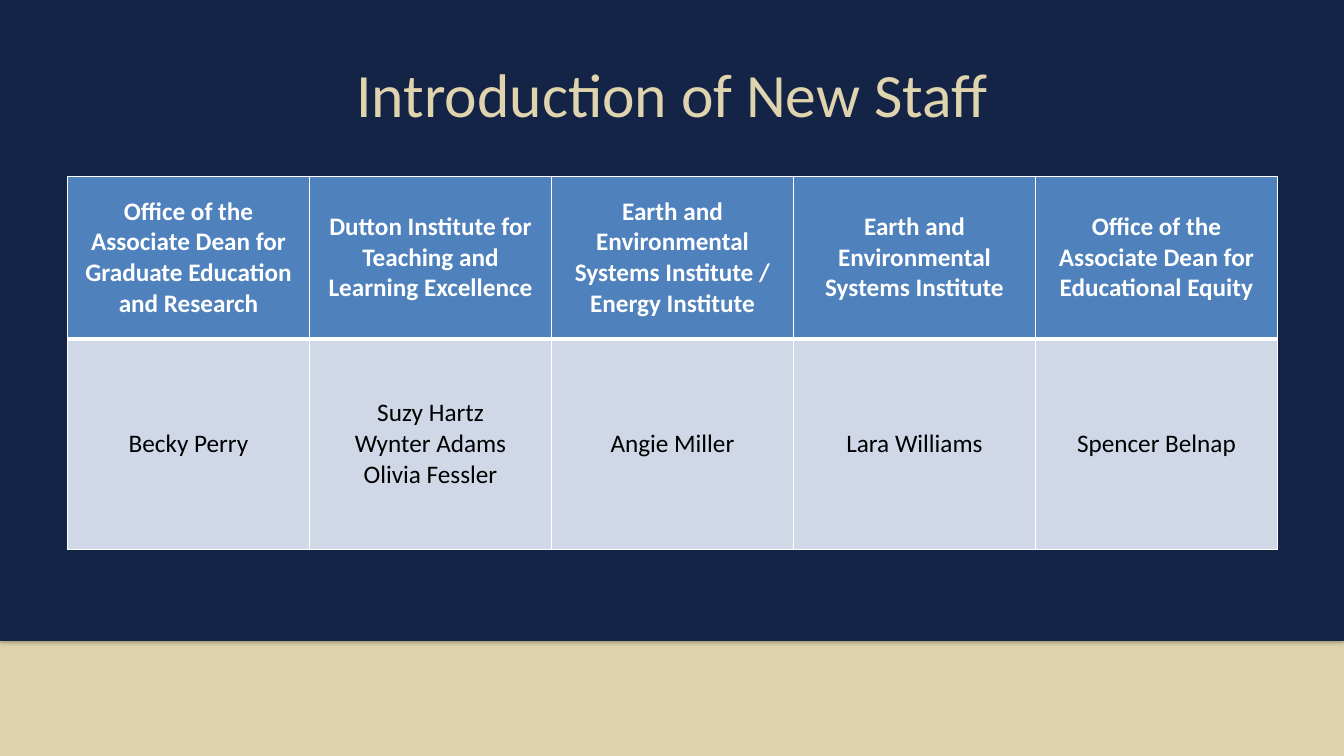
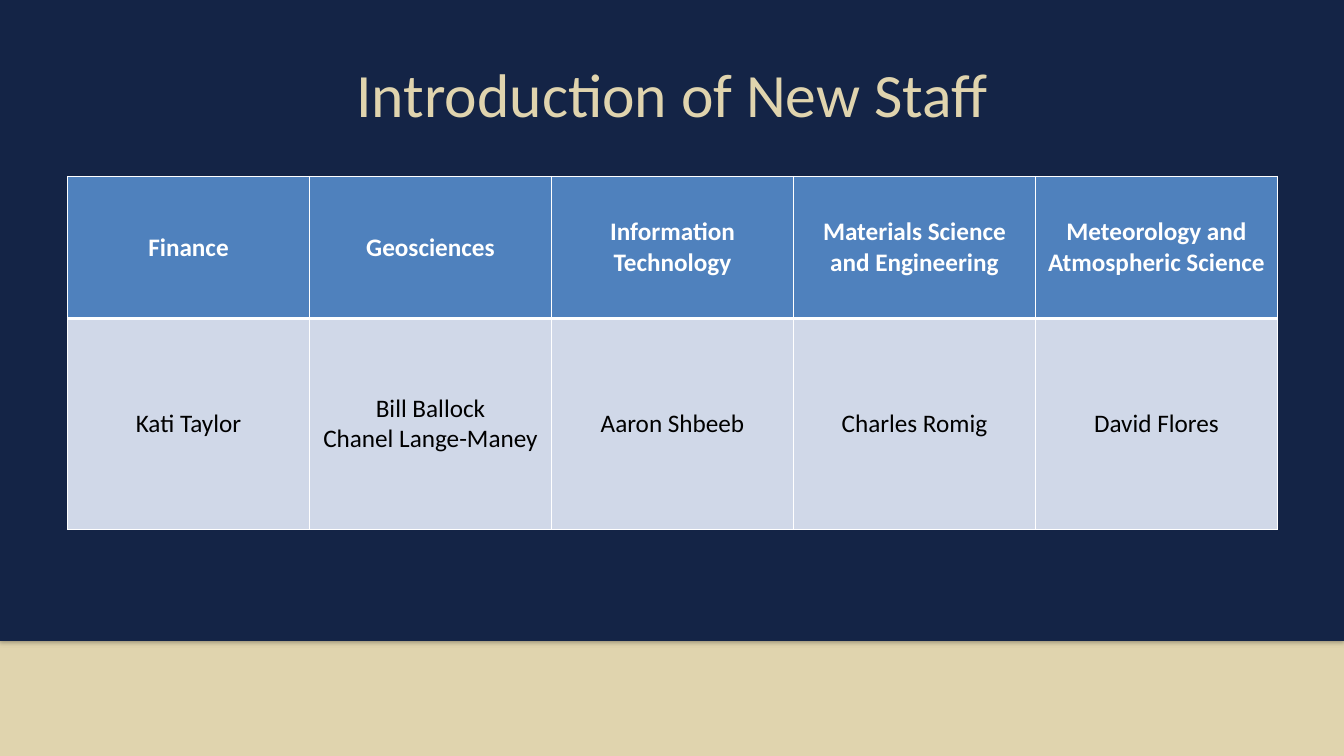
from pptx import Presentation
from pptx import util as u
from pptx.dml.color import RGBColor
from pptx.enum import shapes, text
from pptx.oxml import parse_xml
from pptx.oxml.ns import nsdecls, qn

# Content: each column is a unit and its new staff, one line per paragraph
TITLE = "Introduction of New Staff"
SLIDES = [
    {"head": 1.61, "cols": [
        ("Office of the Associate Dean for Graduate Education and Research",
         "Becky Perry"),
        ("Dutton Institute for Teaching and Learning Excellence",
         "Suzy Hartz\nWynter Adams\nOlivia Fessler"),
        ("Earth and Environmental Systems Institute /\nEnergy Institute",
         "Angie Miller"),
        ("Earth and Environmental Systems Institute", "Lara Williams"),
        ("Office of the Associate Dean for Educational Equity",
         "Spencer Belnap"),
    ]},
    {"head": 1.41, "cols": [
        ("Finance", "Kati Taylor"),
        ("Geosciences", "Bill Ballock\nChanel Lange-Maney"),
        ("Information Technology", "Aaron Shbeeb"),
        ("Materials Science and Engineering", "Charles Romig"),
        ("Meteorology and Atmospheric Science", "David Flores"),
    ]},
]

# Theme and grid
THEME = {"navy": "142446", "sand": "E0D4AE", "blue": "4F81BD",
         "pale": "D0D8E8", "white": "FFFFFF", "black": "000000",
         "font": "Calibri", "title": 44, "cell": 18, "thin": 1, "thick": 3}
WIDE, HIGH = 13.33, 7.5
SPLIT = 6.36
SIDE, SPAN = 0.67, 12
TABLE_TOP, BODY = 1.75, 2.09

ROWS = [  # fill, font format, top and bottom border
    ("blue", {"color": "white", "bold": True}, "thin", "thick"),
    ("pale", {"color": "black", "bold": False}, "thick", "thin"),
]


def color(key):
    return RGBColor.from_string(THEME[key])


def box(*sizes):
    return [u.Inches(n) for n in sizes]


def write(frame, words, size, look):
    """Fill a text frame with centred paragraphs."""
    frame.word_wrap = True
    frame.text = words
    form = {"name": THEME["font"], "size": u.Pt(THEME[size]),
            "bold": look["bold"]}
    for para in frame.paragraphs:
        para.alignment = text.PP_ALIGN.CENTER
        for key, value in form.items():
            setattr(para.font, key, value)
        para.font.color.rgb = color(look["color"])


def band(slide, top, high, fill):
    """Full-width band with a soft shadow below it."""
    rect = slide.shapes.add_shape(shapes.MSO_SHAPE.RECTANGLE,
                                  *box(0, top, WIDE, high))
    rect.fill.solid()
    rect.fill.fore_color.rgb = color(fill)
    rect.line.fill.background()
    rect.shadow.inherit = False
    rect.element.spPr.find(qn("a:effectLst")).append(parse_xml(
        f'<a:outerShdw {nsdecls("a")} blurRad="{u.Pt(3.1)}" '
        f'dist="{u.Pt(1.8)}" dir="5400000" rotWithShape="0">'
        f'<a:srgbClr val="{THEME["black"]}"><a:alpha val="35000"/>'
        '</a:srgbClr></a:outerShdw>'))


def border(cell, top, bottom):
    """Put white borders ahead of the cell's fill."""
    sides = {"L": "thin", "R": "thin", "T": top, "B": bottom}
    props = cell._tc.get_or_add_tcPr()
    for spot, (side, width) in enumerate(sides.items()):
        props.insert(spot, parse_xml(
            f'<a:ln{side} {nsdecls("a")} w="{u.Pt(THEME[width])}">'
            f'<a:solidFill><a:srgbClr val="{THEME["white"]}"/></a:solidFill>'
            f'</a:ln{side}>'))


def base(slide):
    """Bands and title that every slide shares."""
    band(slide, SPLIT, HIGH - SPLIT, "sand")
    band(slide, 0, SPLIT, "navy")
    frame = slide.shapes.add_textbox(*box(SIDE, 0.3, SPAN, 1.25)).text_frame
    frame.vertical_anchor = text.MSO_ANCHOR.MIDDLE
    write(frame, TITLE, "title", {"color": "sand", "bold": False})


def staff(slide, head, cols):
    """Table with units above and names below."""
    table = slide.shapes.add_table(
        len(ROWS), len(cols),
        *box(SIDE, TABLE_TOP, SPAN, head + BODY)).table
    table.horz_banding = False
    for row, high in zip(table.rows, (head, BODY)):
        row.height = u.Inches(high)
    for c, pair in enumerate(cols):
        for r, (words, style) in enumerate(zip(pair, ROWS)):
            fill, look, top, bottom = style
            cell = table.cell(r, c)
            cell.vertical_anchor = text.MSO_ANCHOR.MIDDLE
            cell.fill.solid()
            cell.fill.fore_color.rgb = color(fill)
            write(cell.text_frame, words, "cell", look)
            border(cell, top, bottom)


def main():
    deck = Presentation()
    deck.slide_width, deck.slide_height = box(WIDE, HIGH)
    for item in SLIDES:
        slide = deck.slides.add_slide(deck.slide_layouts[6])
        base(slide)
        staff(slide, **item)
    deck.save("out.pptx")


if __name__ == "__main__":
    main()
